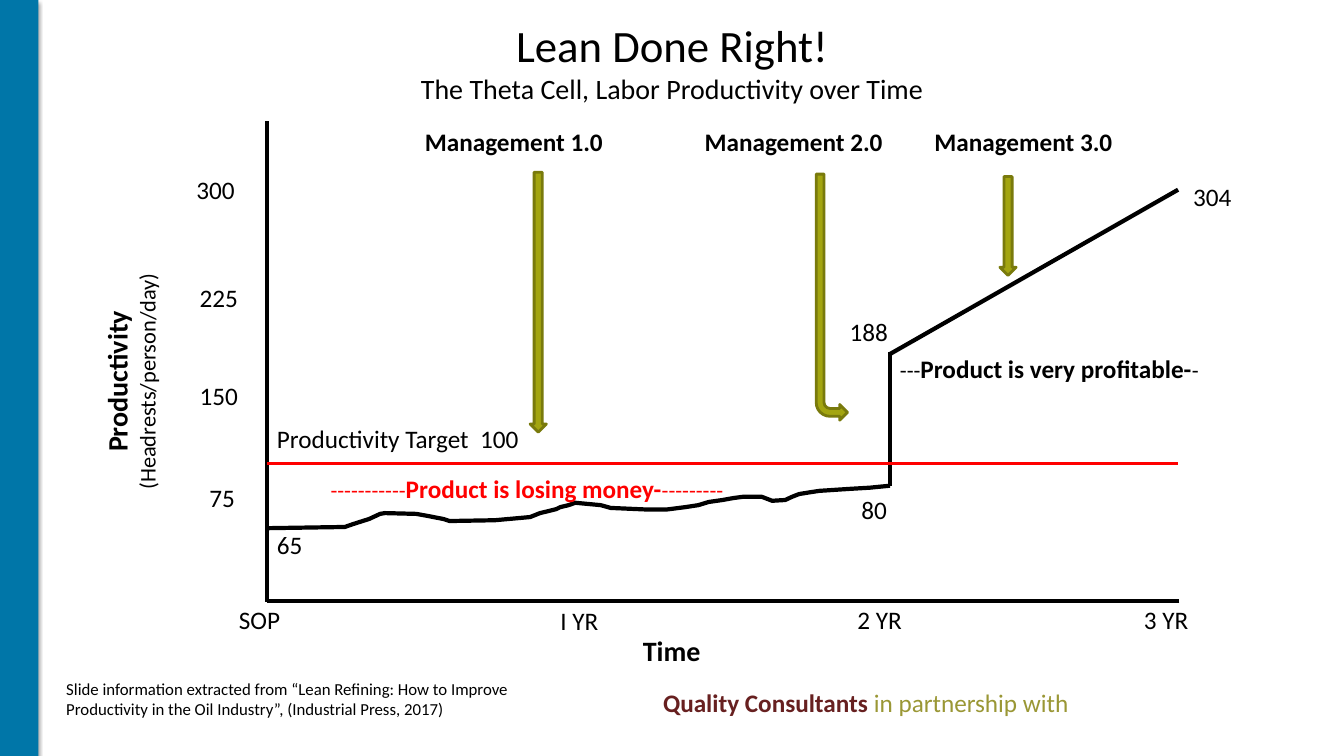
from lxml.etree import SubElement
from pptx import Presentation
from pptx.dml.color import RGBColor
from pptx.enum.shapes import MSO_CONNECTOR, MSO_SHAPE
from pptx.enum.text import PP_ALIGN
from pptx.oxml.ns import qn
from pptx.util import Cm, Pt

BLACK, RED, BLUE = "000000", "FF0000", "0076A8"
OLIVE, EDGE, WINE, MOSS = "A3A510", "797A0C", "672020", "9A9735"

# Short 18 pt labels: text, left, top (cm)
MARKS = [
    ("300", 4.7, 4.27), ("225", 4.78, 6.99), ("150", 4.78, 9.45), ("75", 5.03, 12.04),
    ("SOP", 5.77, 15.11), ("I YR", 13.87, 15.14), ("2 YR", 21.36, 15.11), ("3 YR", 28.58, 15.11),
    ("65", 6.73, 13.21), ("80", 21.46, 12.34), ("188", 21.16, 7.85), ("304", 29.82, 4.45),
    ("100", 11.85, 10.54),
]
PHASES = [("Management 1.0", 10.46), ("Management 2.0", 17.51), ("Management 3.0", 23.3)]

# Box (left, top, width, height), then paragraphs of runs: text, size, colour, bold
NOTES = [
    ((16.46, 17.2, 12, 1.02), [[("Quality Consultants ", 18, WINE, True),
                                ("in partnership with", 18, MOSS, False)]]),
    ((15.95, 15.85, 2.4, 1.12), [[("Time", 20, BLACK, True)]]),
    ((6.73, 10.54, 5.4, 1.02), [[("Productivity Target", 18, BLACK, False)]]),
    ((8.08, 11.79, 10.8, 1.02), [[("-----------", 16, RED, False),
                                  ("Product is losing money-", 18, RED, True),
                                  ("---------", 16, RED, False)]]),
    ((22.43, 8.79, 8.6, 1.02), [[("---", 16, BLACK, False),
                                 ("Product is very profitable-", 18, BLACK, True),
                                 ("-", 16, BLACK, False)]]),
    ((1.42, 16.97, 13.79, 1.27), [[(
        "Slide information extracted from “Lean Refining: How to Improve "
        "Productivity in the Oil Industry”, (Industrial Press, 2017)", 12, BLACK, False)]]),
]
TITLE = ((1.7, 0.33, 30.48, 3.18), [[("Lean Done Right!\v", 32, BLACK, False),
                                     ("The Theta Cell, Labor Productivity over Time", 20, BLACK, False)]])
SCALE = ((0.2, 8.71, 6.17, 1.8), [[("Productivity", 20, BLACK, True)],
                                  [("(Headrests/person/day)", 16, BLACK, False)]])

# From x, y to x, y, colour, width
LINES = [
    (6.73, 3.05, 6.73, 15.16, BLACK, 2.5),
    (29.72, 15.14, 6.73, 15.14, BLACK, 2.5),
    (22.43, 12.24, 22.43, 8.86, BLACK, 3),
    (29.69, 4.78, 22.43, 8.92, BLACK, 3),
    (6.73, 11.68, 29.69, 11.68, RED, 2.5),
]
ARROWS = [
    (MSO_SHAPE.DOWN_ARROW, 13.36, 4.34, 0.41, 6.55),
    (MSO_SHAPE.BENT_ARROW, 20.57, 4.39, 0.79, 6.2),
    (MSO_SHAPE.DOWN_ARROW, 25.2, 4.45, 0.41, 2.49),
]
TREND = [
    (6.76, 13.31), (8.69, 13.28), (8.89, 13.21), (9.14, 13.13), (9.3, 13.08), (9.58, 12.95),
    (9.7, 12.93), (10.49, 12.95), (10.77, 13), (11.18, 13.08), (11.33, 13.13), (12.47, 13.11),
    (13.36, 13.03), (13.61, 12.93), (13.82, 12.88), (14.02, 12.83), (14.12, 12.78),
    (14.33, 12.73), (14.5, 12.67), (15.14, 12.73), (15.39, 12.8), (16.3, 12.84),
    (16.8, 12.84), (17.27, 12.78), (17.6, 12.73), (17.86, 12.65), (18.21, 12.6),
    (18.49, 12.55), (18.72, 12.52), (19.2, 12.52), (19.46, 12.62), (19.79, 12.6),
    (19.96, 12.52), (20.14, 12.45), (20.45, 12.4), (20.65, 12.37), (21.41, 12.32),
    (21.92, 12.29), (22.43, 12.24),
]


def tint(fmt, code):
    fmt.rgb = RGBColor.from_string(code)


def fill(shape, code):
    shape.fill.solid()
    tint(shape.fill.fore_color, code)


def stroke(shape, code, width):
    tint(shape.line.color, code)
    shape.line.width = Pt(width)


def write(slide, box, paras, align=PP_ALIGN.LEFT):
    shape = slide.shapes.add_textbox(*map(Cm, box))
    frame = shape.text_frame
    frame.word_wrap = True
    for i, parts in enumerate(paras):
        para = frame.add_paragraph() if i else frame.paragraphs[0]
        para.alignment = align
        for text, size, code, bold in parts:
            start = len(para.runs)
            words, *rest = text.split("\v")
            para.add_run().text = words
            if rest:
                para.add_line_break()
            for run in para.runs[start:]:
                run.font.name, run.font.size, run.font.bold = "Calibri", Pt(size), bold
                tint(run.font.color, code)
    return shape


def shade(shape):
    """Give the shape a soft shadow below it."""
    effects = SubElement(shape.element.spPr, qn("a:effectLst"))
    shadow = SubElement(effects, qn("a:outerShdw"), blurRad=str(Pt(3.1)),
                        dist=str(Pt(1.8)), dir="5400000", rotWithShape="0")
    black = SubElement(shadow, qn("a:srgbClr"), val=BLACK)
    SubElement(black, qn("a:alpha"), val="35000")


def main():
    deck = Presentation()
    deck.slide_width, deck.slide_height = Cm(33.87), Cm(19.05)
    slide = deck.slides.add_slide(deck.slide_layouts[6])
    shapes = slide.shapes

    bar = shapes.add_shape(MSO_SHAPE.RECTANGLE, 0, 0, Cm(0.97), deck.slide_height)
    fill(bar, BLUE)
    bar.line.fill.background()
    shade(bar)

    write(slide, *TITLE, PP_ALIGN.CENTER)
    write(slide, *SCALE, PP_ALIGN.CENTER).rotation = 270

    start, *rest = [(Cm(x), Cm(y)) for x, y in TREND]
    pen = shapes.build_freeform(*start)
    pen.add_line_segments(rest, close=False)
    curve = pen.convert_to_shape()
    curve.fill.background()
    curve.shadow.inherit = False
    stroke(curve, BLACK, 3)

    for *ends, code, width in LINES:
        line = shapes.add_connector(MSO_CONNECTOR.STRAIGHT, *map(Cm, ends))
        stroke(line, code, width)
        SubElement(line.element.spPr, qn("a:effectLst"))

    for box, paras in NOTES:
        write(slide, box, paras)
    for text, left, top in MARKS:
        write(slide, (left, top, 2.2, 1.02), [[(text, 18, BLACK, False)]])
    for text, left in PHASES:
        write(slide, (left, 3.05, 5.4, 1.02), [[(text, 18, BLACK, True)]])

    for kind, *box in ARROWS:
        arrow = shapes.add_shape(kind, *map(Cm, box))
        arrow.shadow.inherit = False
        fill(arrow, OLIVE)
        stroke(arrow, EDGE, 2)
        if kind == MSO_SHAPE.BENT_ARROW:
            arrow.element.spPr.xfrm.set("flipV", "1")

    deck.save("out.pptx")


if __name__ == "__main__":
    main()
